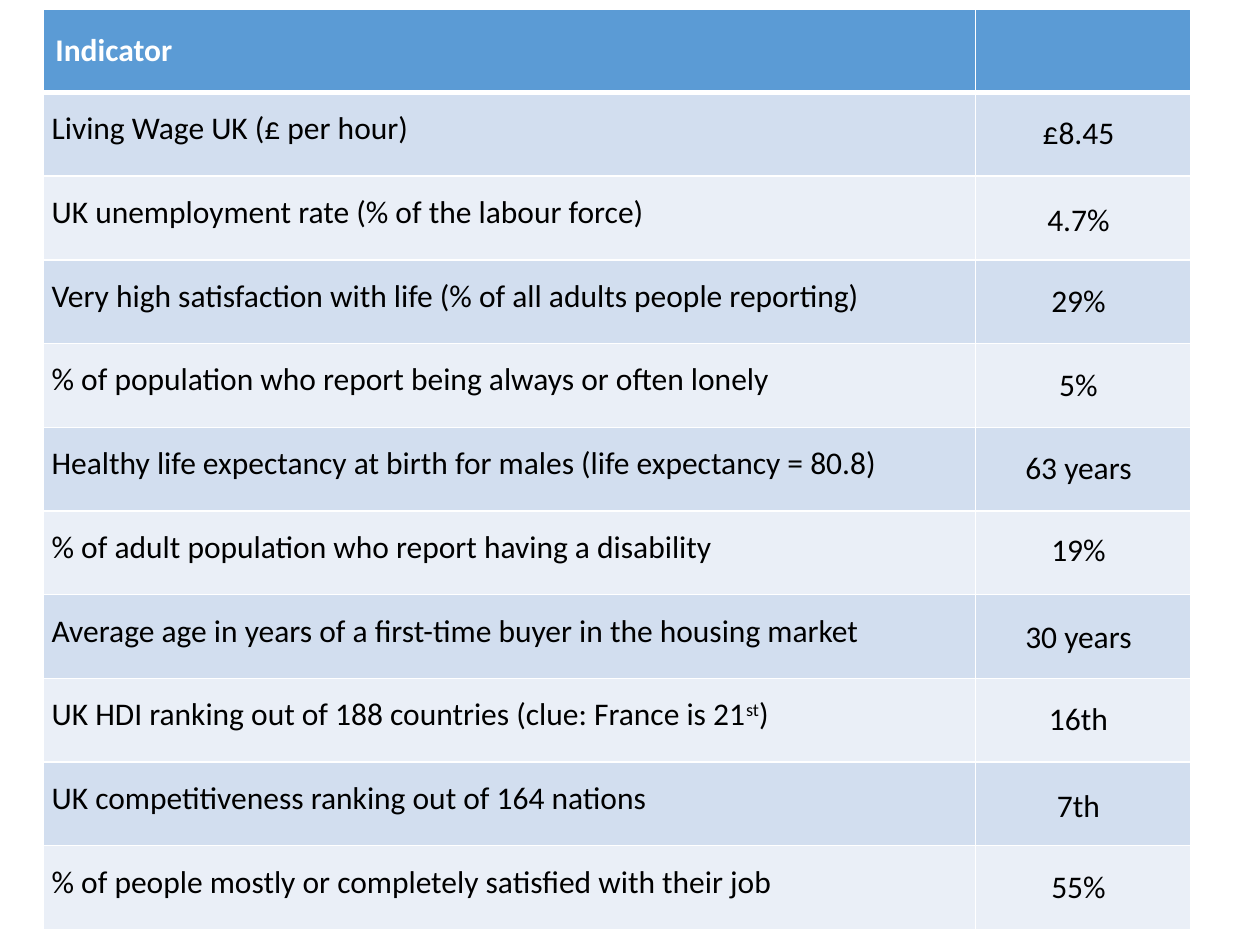
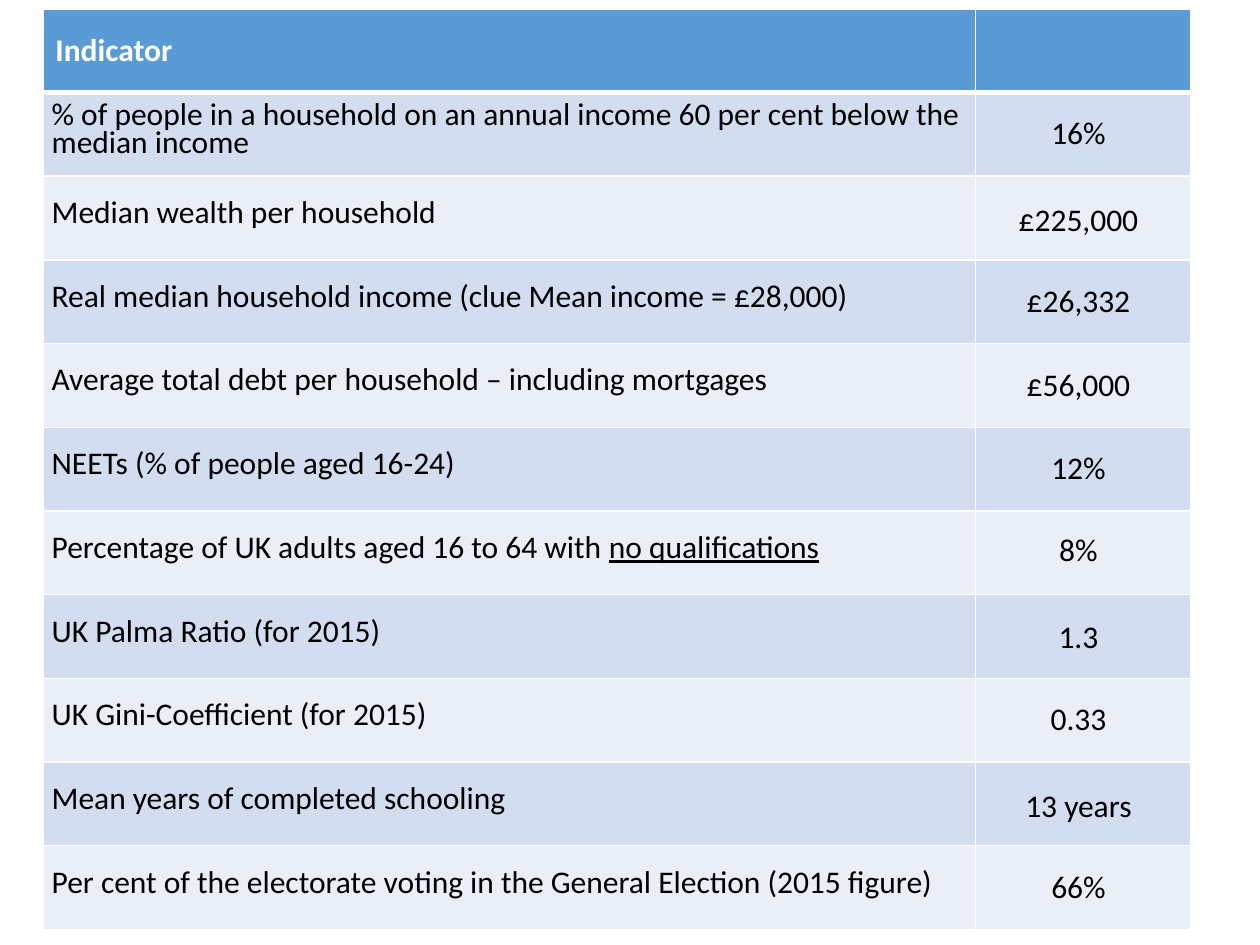
from dataclasses import dataclass

from lxml.etree import SubElement
from pptx import Presentation
from pptx.dml.color import RGBColor
from pptx.enum.text import MSO_ANCHOR, MSO_AUTO_SIZE, PP_ALIGN
from pptx.oxml.ns import qn
from pptx.util import Pt

SCALE = 9144  # EMU in one px, 100 px to the inch


def px(size):
    return size * SCALE


@dataclass(frozen=True)
class Theme:
    font: str = "Calibri"
    size: int = 18
    lead: int = 16
    ink: str = "000000"
    white: str = "FFFFFF"
    head: str = "5B9BD5"
    bands: tuple = ("D2DEEF", "EAEFF7")
    thin: int = 1
    thick: int = 3


def style(item, values):
    for name, value in values.items():
        setattr(item, name, value)


class Deck:
    def __init__(self, theme):
        self.theme = theme
        self.file = Presentation()
        style(self.file, {"slide_width": px(1000), "slide_height": px(750)})
        self.slide = None

    def page(self):
        self.slide = self.file.slides.add_slide(self.file.slide_layouts[6])

    def text(self, para, parts, color, bold=False):
        """Fill a paragraph from a string or from (words, look) pairs."""
        if isinstance(parts, str):
            parts = [(parts, "")]
        for words, look in parts:
            run = para.add_run()
            run.text = words
            style(run.font, {"name": self.theme.font, "bold": bold,
                             "size": Pt(self.theme.size)})
            run.font.color.rgb = RGBColor.from_string(color)
            if look == "under":
                run.font.underline = True
            elif look == "super":
                run._r.get_or_add_rPr().set("baseline", "30000")

    def cell(self, cell, fill, top, bottom):
        """Draw the four borders, then the fill."""
        thin = self.theme.thin
        props = cell._tc.get_or_add_tcPr()
        for side, width in zip("LRTB", (thin, thin, top, bottom)):
            line = SubElement(props, qn(f"a:ln{side}"), w=str(Pt(width)))
            paint = SubElement(line, qn("a:solidFill"))
            SubElement(paint, qn("a:srgbClr"), val=self.theme.white)
        cell.fill.solid()
        cell.fill.fore_color.rgb = RGBColor.from_string(fill)
        cell.vertical_anchor = MSO_ANCHOR.MIDDLE

    def table(self, box, widths, title, labels):
        look = self.theme
        grid = self.slide.shapes.add_table(
            len(labels) + 1, len(widths), *map(px, box)).table
        for col, width in zip(grid.columns, widths):
            col.width = px(width)

        # Header row
        for cell in grid.rows[0].cells:
            self.cell(cell, look.head, look.thin, look.thick)
        self.text(grid.cell(0, 0).text_frame.paragraphs[0], title,
                  look.white, bold=True)

        # Banded rows
        for row, label in enumerate(labels, 1):
            top = look.thick if row == 1 else look.thin
            for cell in grid.rows[row].cells:
                self.cell(cell, look.bands[(row - 1) % 2], top, look.thin)
            cell = grid.cell(row, 0)
            style(cell, {"margin_left": px(7), "margin_right": px(7),
                         "margin_top": 0, "margin_bottom": 0})
            para = cell.text_frame.paragraphs[0]
            para.line_spacing = Pt(look.lead)
            self.text(para, label, look.ink)

    def value(self, box, words):
        frame = self.slide.shapes.add_textbox(*map(px, box)).text_frame
        style(frame, {"word_wrap": True,
                      "auto_size": MSO_AUTO_SIZE.SHAPE_TO_FIT_TEXT})
        para = frame.paragraphs[0]
        para.alignment = PP_ALIGN.CENTER
        self.text(para, words, self.theme.ink)


# Shared layout
TABLE = (34, 7, 911, 731)
WIDTHS = (740, 171)
TOPS = (85, 154, 218, 285, 351, 416, 485, 550, 619, 683)

# Indicators and their values, one list for each slide
WORK = [
    ("Living Wage UK (£ per hour)", "£8.45"),
    ("UK unemployment rate (% of the labour force)", "4.7%"),
    ("Very high satisfaction with life (% of all adults people reporting)",
     "29%"),
    ("% of population who report being always or often lonely", "5%"),
    ("Healthy life expectancy at birth for males (life expectancy = 80.8)",
     "63 years"),
    ("% of adult population who report having a disability", "19%"),
    ("Average age in years of a first-time buyer in the housing market",
     "30 years"),
    ([("UK HDI ranking out of 188 countries (clue: France is 21", ""),
      ("st", "super"), (")", "")], "16th"),
    ("UK competitiveness ranking out of 164 nations", "7th"),
    ("% of people mostly or completely satisfied with their job", "55%"),
]
WEALTH = [
    ("% of people in a household on an annual income 60 per cent below "
     "the median income", "16%"),
    ("Median wealth per household", "£225,000"),
    ("Real median household income (clue Mean income = £28,000)", "£26,332"),
    ("Average total debt per household – including mortgages", "£56,000"),
    ("NEETs (% of people aged 16-24)", "12%"),
    ([("Percentage of UK adults aged 16 to 64 with ", ""),
      ("no qualifications", "under")], "8%"),
    ("UK Palma Ratio (for 2015)", "1.3"),
    ("UK Gini-Coefficient (for 2015)", "0.33"),
    ("Mean years of completed schooling", "13 years"),
    ("Per cent of the electorate voting in the General Election "
     "(2015 figure)", "66%"),
]


def main():
    deck = Deck(Theme())
    for facts in (WORK, WEALTH):
        deck.page()
        labels, values = zip(*facts)
        deck.table(TABLE, WIDTHS, "Indicator", labels)
        for top, words in zip(TOPS, values):
            deck.value((793, top, 126, 40), words)
    deck.file.save("out.pptx")


if __name__ == "__main__":
    main()
